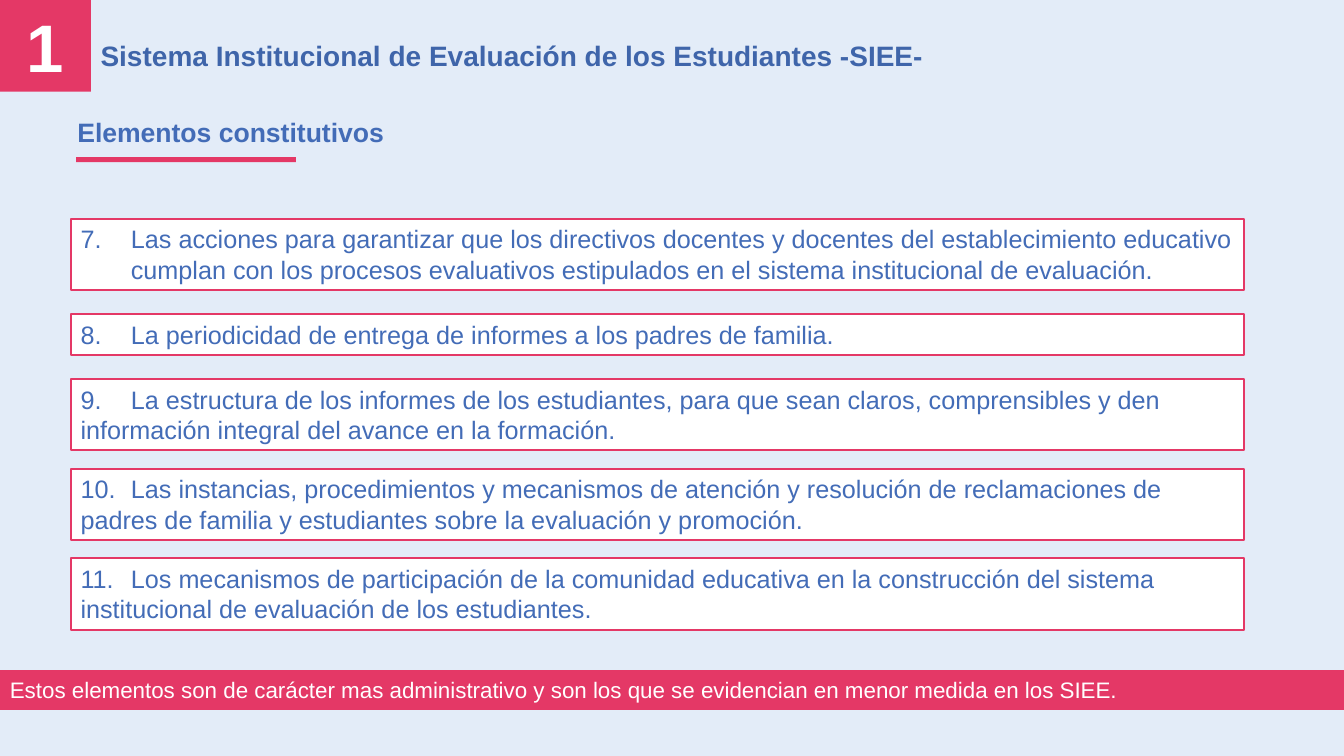
from pptx import Presentation
from pptx.dml.color import RGBColor
from pptx.enum.shapes import MSO_SHAPE
from pptx.enum.text import MSO_ANCHOR, MSO_AUTO_SIZE, PP_ALIGN
from pptx.oxml.ns import qn
from pptx.util import Cm, Pt
from lxml.etree import SubElement

PALE = RGBColor(0xE3, 0xEC, 0xF8)
PINK = RGBColor(0xE4, 0x38, 0x66)
NAVY = RGBColor(0x3F, 0x65, 0xAA)
BLUE = RGBColor(0x43, 0x6C, 0xB7)
WHITE = RGBColor(0xFF, 0xFF, 0xFF)

TAB = Cm(1.27)
FIRST = 7
# Top and height in cm, whether the text hangs, wording
ITEMS = [
    (5.51, 1.8, True, "Las acciones para garantizar que los directivos docentes y docentes "
     "del establecimiento educativo cumplan con los procesos evaluativos "
     "estipulados en el sistema institucional de evaluación."),
    (7.92, 1.02, False, "La periodicidad de entrega de informes a los padres de familia."),
    (9.55, 1.8, False, "La estructura de los informes de los estudiantes, para que sean claros, "
     "comprensibles y den información integral del avance en la formación."),
    (11.81, 1.8, False, "Las instancias, procedimientos y mecanismos de atención y resolución de "
     "reclamaciones de padres de familia y estudiantes sobre la evaluación y promoción."),
    (14.07, 1.8, False, "Los mecanismos de participación de la comunidad educativa en la "
     "construcción del sistema institucional de evaluación de los estudiantes."),
]


def place(shape, left, top, width, height):
    shape.left, shape.top = Cm(left), Cm(top)
    shape.width, shape.height = Cm(width), Cm(height)


def set_tab(para, hang):
    """Put the text after the number at the tab, with later lines hung there if asked."""
    props = para._p.get_or_add_pPr()
    if hang:
        props.set("marL", str(TAB))
        props.set("indent", str(-TAB))
    tabs = SubElement(props, qn("a:tabLst"))
    SubElement(tabs, qn("a:tab"), pos=str(TAB), algn="l")


def write(shape, text, size, color, bold=False, align=PP_ALIGN.LEFT, anchor=MSO_ANCHOR.TOP):
    frame = shape.text_frame
    frame.word_wrap = True
    frame.auto_size = MSO_AUTO_SIZE.NONE
    frame.vertical_anchor = anchor
    frame.text = text
    para = frame.paragraphs[0]
    para.alignment = align
    if "\t" not in text:
        style(para, size, color, bold)
    return para


def style(para, size, color, bold=False):
    font = para.font
    font.name, font.size, font.bold = "Arial", Pt(size), bold
    font.color.rgb = color


def add_box(slide, left, top, width, height, fill, line=None):
    box = slide.shapes.add_shape(MSO_SHAPE.RECTANGLE, Cm(left), Cm(top), Cm(width), Cm(height))
    box.shadow.inherit = False
    box.fill.solid()
    box.fill.fore_color.rgb = fill
    if line is None:
        box.line.fill.background()
    else:
        box.line.color.rgb = line
        box.line.width = Pt(1.5)
    return box


def add_item(slide, number, top, height, hang, text):
    box = add_box(slide, 1.78, top, 29.57, height, WHITE, PINK)
    para = write(box, f"{number}.\t{text}", 18, BLUE)
    set_tab(para, hang)
    style(para, 18, BLUE)


def main():
    deck = Presentation()
    deck.slide_width, deck.slide_height = Cm(33.87), Cm(19.05)
    slide = deck.slides.add_slide(deck.slide_layouts[5])
    slide.background.fill.solid()
    slide.background.fill.fore_color.rgb = PALE

    title = slide.shapes.title
    place(title, 2.28, 0.84, 31.24, 1.11)
    write(title, "Sistema Institucional de Evaluación de los Estudiantes -SIEE-", 20, NAVY, True)

    badge = add_box(slide, 0, 0, 2.29, 2.31, PINK)
    write(badge, "1", 48, WHITE, True, PP_ALIGN.CENTER, MSO_ANCHOR.MIDDLE)

    heading = slide.shapes.add_textbox(Cm(1.7), Cm(2.8), Cm(8.8), Cm(1.07))
    write(heading, "Elementos constitutivos", 19, BLUE, True)
    add_box(slide, 1.92, 3.96, 5.54, 0.13, PINK)

    for number, item in enumerate(ITEMS, FIRST):
        add_item(slide, number, *item)

    banner = add_box(slide, 0, 16.92, 33.87, 0.94, PINK, PINK)
    write(banner, "Estos elementos son de carácter mas administrativo y son los que se "
          "evidencian en menor medida en los SIEE.", 16, WHITE, align=PP_ALIGN.JUSTIFY)

    deck.save("out.pptx")


if __name__ == "__main__":
    main()
